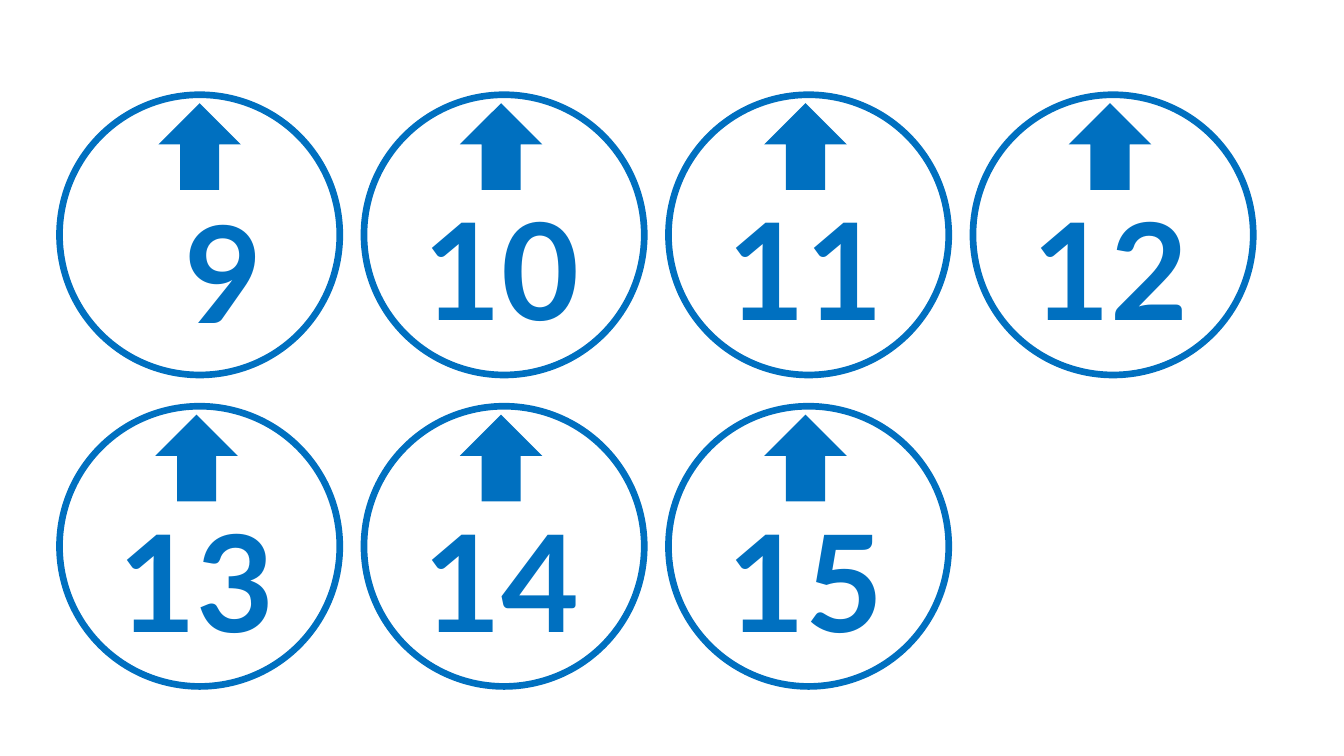
"""Build a slide of numbered circles, each with an arrow pointing up."""
import pptx
import pptx.dml.color
import pptx.enum.shapes
import pptx.enum.text
import pptx.oxml
import pptx.util
from lxml import etree

EMU_PER_PX = 9144
COLOURS = {"blue": "0070C0"}
NUMBER_FORMAT = {"name": "Lato", "size": pptx.util.Pt(96), "bold": True}
FIRST_NUMBER, LAST_NUMBER, COLUMNS = 9, 15, 4
LEFT, TOP, COLUMN_STEP, ROW_STEP, DIAMETER = 59, 94, 302, 309, 278
ONE_DIGIT = {"arrow": (111, 16, 56, 73), "number": (114, 89, 51, 172)}
TWO_DIGITS = {"arrow": (108, 16, 56, 73), "number": (42, 86, 188, 172)}


def px(*lengths):
    return [pptx.util.Emu(length * EMU_PER_PX) for length in lengths]


def blue():
    return pptx.dml.color.RGBColor.from_string(COLOURS["blue"])


def add_outlined(group, kind, place, line_width, filled):
    shape = group.shapes.add_shape(kind, *px(*place))
    shape.shadow.inherit = False
    if filled:
        shape.fill.solid()
        shape.fill.fore_color.rgb = blue()
    else:
        shape.fill.background()
    shape.line.color.rgb = blue()
    shape.line.width = pptx.util.Pt(line_width)
    outline = shape.line._get_or_add_ln()
    etree.SubElement(outline, pptx.oxml.ns.qn("a:miter"), lim="800000")


def add_number(group, number, place):
    box = group.shapes.add_textbox(*px(*place))
    frame = box.text_frame
    frame.word_wrap = True
    frame.auto_size = pptx.enum.text.MSO_AUTO_SIZE.SHAPE_TO_FIT_TEXT
    para = frame.paragraphs[0]
    para.alignment = pptx.enum.text.PP_ALIGN.CENTER
    span = para.add_run()
    span.text = str(number)
    for name, value in NUMBER_FORMAT.items():
        setattr(span.font, name, value)
    span.font.color.rgb = blue()


def add_badge(page, number, left, top):
    kinds = pptx.enum.shapes.MSO_SHAPE
    layout = ONE_DIGIT if number < 10 else TWO_DIGITS
    places = {
        part: (left + x, top + y, width, height)
        for part, (x, y, width, height) in layout.items()
    }
    group = page.shapes.add_group_shape()
    add_outlined(group, kinds.OVAL, (left, top, DIAMETER, DIAMETER), 4.75, False)
    add_outlined(group, kinds.UP_ARROW, places["arrow"], 7.75, True)
    add_number(group, number, places["number"])


def main():
    deck = pptx.Presentation()
    deck.slide_width, deck.slide_height = px(1333, 750)
    page = deck.slides.add_slide(deck.slide_layouts[6])
    for index, number in enumerate(range(FIRST_NUMBER, LAST_NUMBER + 1)):
        row, column = divmod(index, COLUMNS)
        add_badge(page, number, LEFT + column * COLUMN_STEP, TOP + row * ROW_STEP)
    deck.save("out.pptx")


if __name__ == "__main__":
    main()
